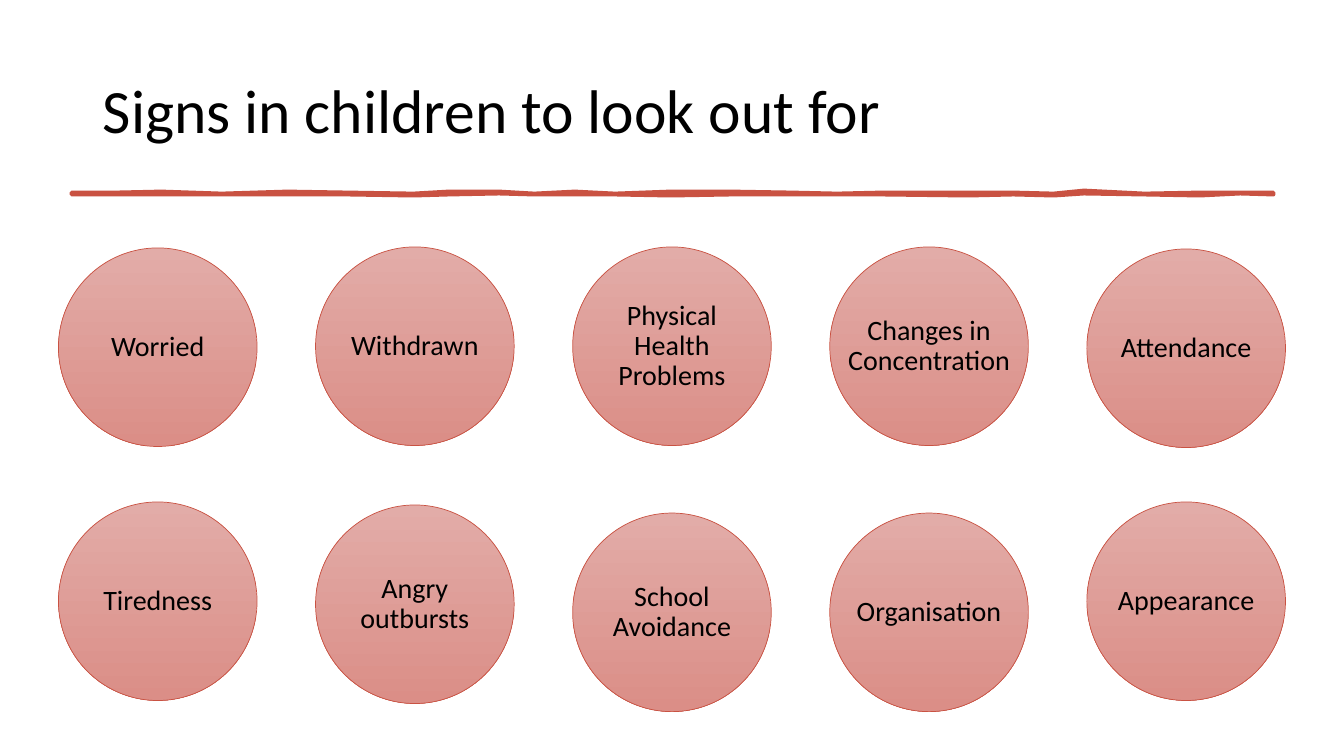
from dataclasses import dataclass

from pptx import Presentation
from pptx.dml.color import RGBColor
from pptx.enum.shapes import MSO_SHAPE as Preset
from pptx.enum.text import MSO_ANCHOR as Anchor, PP_ALIGN as Align
from pptx.slide import Slide
from pptx.text.text import TextFrame
from pptx.util import Inches, Pt


@dataclass(frozen=True)
class Theme:
    font: str = "Calibri"
    ink: RGBColor = RGBColor(0x00, 0x00, 0x00)
    accent: RGBColor = RGBColor(0xC9, 0x52, 0x42)
    circle_top: RGBColor = RGBColor(0xE2, 0xAC, 0xA8)
    circle_bottom: RGBColor = RGBColor(0xDB, 0x8E, 0x87)
    title_size: int = 44
    sign_size: int = 20


@dataclass(frozen=True)
class Sign:
    label: str
    top: float


@dataclass(frozen=True)
class BrushPoint:
    """Upper and lower edge of the brush stroke at one x, in inches."""
    x: float
    upper: float
    lower: float


THEME = Theme()
CIRCLE_SIZE = 1.97
FIRST_LEFT = 0.58
COLUMN_PITCH = 2.55

SIGN_ROWS = [
    [
        Sign("Worried", 2.46),
        Sign("Withdrawn", 2.45),
        Sign("Physical\vHealth\vProblems", 2.45),
        Sign("Changes in\vConcentration", 2.45),
        Sign("Attendance", 2.47),
    ],
    [
        Sign("Tiredness", 4.98),
        Sign("Angry\voutbursts", 5.01),
        Sign("School\vAvoidance", 5.09),
        Sign("Organisation", 5.09),
        Sign("Appearance", 4.98),
    ],
]

BRUSH_STROKE = [
    BrushPoint(0.71, 1.91, 1.93),
    BrushPoint(1.15, 1.91, 1.93),
    BrushPoint(1.60, 1.90, 1.93),
    BrushPoint(2.20, 1.92, 1.93),
    BrushPoint(2.85, 1.90, 1.93),
    BrushPoint(3.45, 1.91, 1.93),
    BrushPoint(4.10, 1.92, 1.94),
    BrushPoint(4.45, 1.90, 1.93),
    BrushPoint(4.95, 1.90, 1.92),
    BrushPoint(5.30, 1.92, 1.93),
    BrushPoint(5.70, 1.90, 1.93),
    BrushPoint(6.10, 1.92, 1.93),
    BrushPoint(6.65, 1.90, 1.94),
    BrushPoint(7.25, 1.90, 1.93),
    BrushPoint(7.85, 1.91, 1.93),
    BrushPoint(8.30, 1.92, 1.93),
    BrushPoint(8.75, 1.91, 1.93),
    BrushPoint(9.60, 1.91, 1.94),
    BrushPoint(10.05, 1.91, 1.93),
    BrushPoint(10.45, 1.92, 1.94),
    BrushPoint(10.75, 1.89, 1.92),
    BrushPoint(11.35, 1.92, 1.93),
    BrushPoint(11.90, 1.91, 1.94),
    BrushPoint(12.30, 1.91, 1.92),
    BrushPoint(12.63, 1.91, 1.93),
]


def write_text(frame: TextFrame, text: str, *, size: int, align: Align,
               wrap: bool = True) -> None:
    frame.word_wrap = wrap
    frame.vertical_anchor = Anchor.MIDDLE
    frame.text = text
    paragraph = frame.paragraphs[0]
    paragraph.alignment = align
    paragraph.line_spacing = 0.9
    for run in paragraph.runs:
        run.font.name = THEME.font
        run.font.size = Pt(size)
        run.font.color.rgb = THEME.ink


def draw_brush_stroke(slide: Slide, points: list[BrushPoint]) -> None:
    upper = [(Inches(p.x), Inches(p.upper)) for p in points]
    lower = [(Inches(p.x), Inches(p.lower)) for p in reversed(points)]
    builder = slide.shapes.build_freeform(*upper[0])
    builder.add_line_segments(upper[1:] + lower, close=True)
    stroke = builder.convert_to_shape()
    stroke.shadow.inherit = False
    stroke.fill.solid()
    stroke.fill.fore_color.rgb = THEME.accent
    stroke.line.color.rgb = THEME.accent
    stroke.line.width = Pt(2.75)


def draw_sign(slide: Slide, sign: Sign, column: int) -> None:
    circle = slide.shapes.add_shape(
        Preset.OVAL, Inches(FIRST_LEFT + column * COLUMN_PITCH),
        Inches(sign.top), Inches(CIRCLE_SIZE), Inches(CIRCLE_SIZE))
    circle.shadow.inherit = False
    circle.fill.gradient()
    circle.fill.gradient_angle = 270
    colors = (THEME.circle_top, THEME.circle_bottom)
    for position, (stop, color) in enumerate(
            zip(circle.fill.gradient_stops, colors)):
        stop.position = position
        stop.color.rgb = color
    circle.line.color.rgb = THEME.accent
    circle.line.width = Pt(0.5)
    write_text(circle.text_frame, sign.label, size=THEME.sign_size,
               align=Align.CENTER, wrap=False)


def main() -> None:
    deck = Presentation()
    deck.slide_width, deck.slide_height = Inches(13.33), Inches(7.5)
    slide = deck.slides.add_slide(deck.slide_layouts.get_by_name("Title Only"))

    title = slide.shapes.title
    title.left, title.top = Inches(0.92), Inches(0.4)
    title.width, title.height = Inches(11.5), Inches(1.45)
    write_text(title.text_frame, "Signs in children to look out for",
               size=THEME.title_size, align=Align.LEFT)

    draw_brush_stroke(slide, BRUSH_STROKE)
    for row in SIGN_ROWS:
        for column, sign in enumerate(row):
            draw_sign(slide, sign, column)

    deck.save("out.pptx")


if __name__ == "__main__":
    main()
